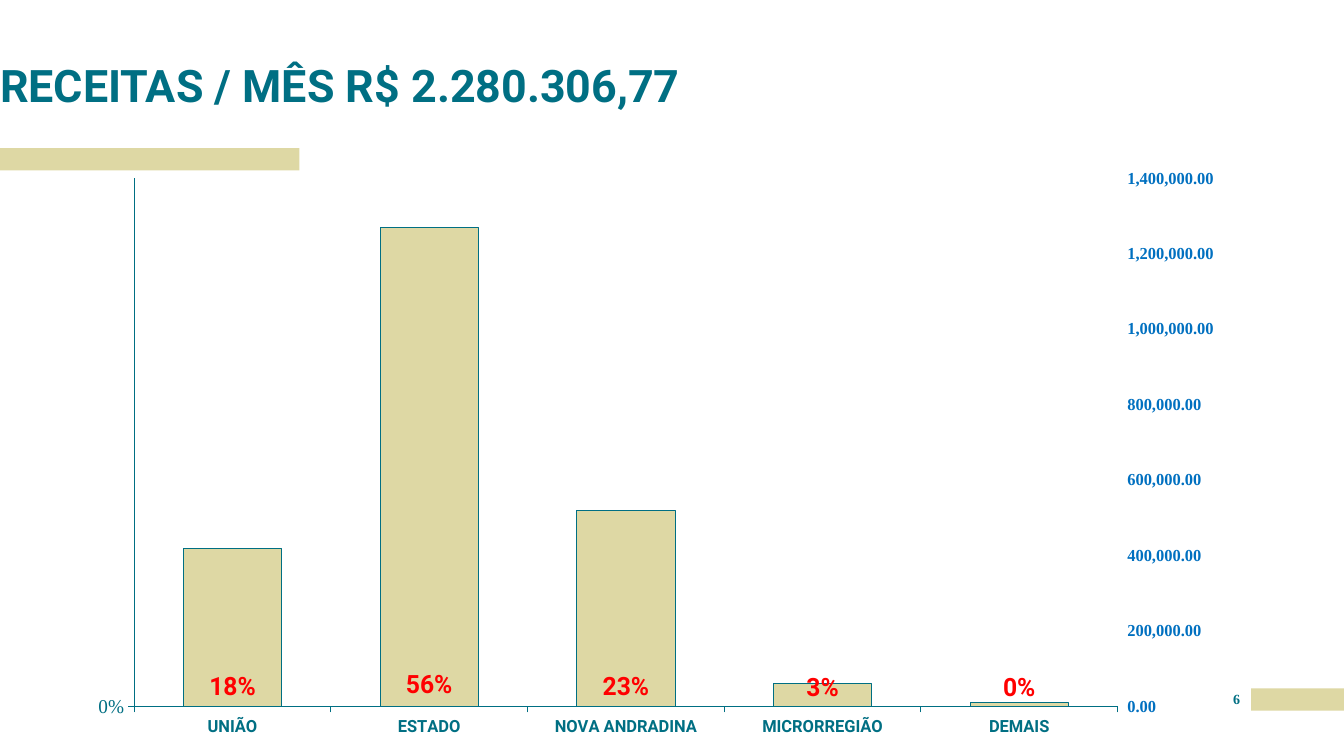
from copy import deepcopy

from lxml import etree
from pptx import Presentation
from pptx.chart.data import CategoryChartData
from pptx.dml.color import RGBColor
from pptx.enum import chart as ch, shapes, text
from pptx.oxml import parse_xml
from pptx.oxml.ns import nsdecls, qn
from pptx.util import Inches, Pt

TEAL = RGBColor(0x00, 0x6F, 0x83)
SAND = RGBColor(0xDE, 0xD8, 0xA4)
PALE_CYAN = RGBColor(0xA5, 0xE1, 0xE4)
BLUE = RGBColor(0x00, 0x70, 0xC0)
RED = RGBColor(0xFF, 0x00, 0x00)


def set_font(font, name, size, color, bold=False):
    font.name, font.size, font.bold = name, Pt(size), bold
    font.color.rgb = color


def clear_margins(frame):
    frame.margin_left = frame.margin_right = frame.margin_top = frame.margin_bottom = 0
    frame.word_wrap = True


presentation = Presentation()
presentation.slide_width = Inches(13.33)
presentation.slide_height = Inches(7.5)
slide = presentation.slides.add_slide(presentation.slide_layouts[5])

# Accent bars
for left, top, width in ((12.41, 6.83, 0.92), (0, 1.47, 2.97)):
    bar = slide.shapes.add_shape(shapes.MSO_SHAPE.RECTANGLE, Inches(left), Inches(top),
                                 Inches(width), Inches(0.22))
    bar.shadow.inherit = False
    bar.fill.solid()
    bar.fill.fore_color.rgb = SAND
    bar.line.fill.background()

# Title
title = slide.shapes.title
title.left, title.top, title.width, title.height = map(Inches, (0, 0.46, 8.53, 0.65))
clear_margins(title.text_frame)
title.text_frame.auto_size = text.MSO_AUTO_SIZE.NONE
title.text_frame.vertical_anchor = text.MSO_ANCHOR.BOTTOM
title.text_frame.text = "RECEITAS / MÊS R$ 2.280.306,77"
paragraph = title.text_frame.paragraphs[0]
paragraph.alignment = text.PP_ALIGN.LEFT
paragraph.line_spacing = 0.9
set_font(paragraph.font, "Roboto", 32, TEAL, True)

# Chart: shares on the left axis, amounts on the right axis
data = CategoryChartData()
data.categories = ["UNIÃO", "ESTADO", "NOVA ANDRADINA", "MICRORREGIÃO", "DEMAIS"]
data.add_series("Series 1", (0.18, 0.56, 0.23, 0.03, 0), "0%")
data.add_series("Series 2", (420000, 1270000, 520000, 60000, 10000), "#,##0.00")
chart = slide.shapes.add_chart(ch.XL_CHART_TYPE.COLUMN_CLUSTERED, Inches(0.32), Inches(1.59),
                               Inches(11.72), Inches(5.79), data).chart
chart.has_legend = False
chart.has_title = False
set_font(chart.font, "Times New Roman", 10, TEAL)

plot = chart.plots[0]
plot.gap_width = 100
plot.overlap = 100
plot.vary_by_categories = False

category_axis, share_axis = chart.category_axis, chart.value_axis
for axis in (category_axis, share_axis):
    axis.major_tick_mark = ch.XL_TICK_MARK.OUTSIDE
    axis.format.line.color.rgb = TEAL
    axis.format.line.width = Pt(0.75)
category_axis.tick_label_position = ch.XL_TICK_LABEL_POSITION.LOW
set_font(category_axis.tick_labels.font, "Roboto", 12, TEAL, True)
set_font(share_axis.tick_labels.font, "Times New Roman", 14, TEAL)
share_axis.tick_labels.number_format = "0%"
share_axis.tick_labels.number_format_is_linked = False
share_axis.minimum_scale, share_axis.maximum_scale = 0, 100
share_axis.major_unit = 10000
share_axis.major_gridlines.format.line.color.rgb = PALE_CYAN
share_axis.major_gridlines.format.line.width = Pt(0.75)

# Second column group with its own pair of axes
plot_area = chart._chartSpace.chart.plotArea
share_group = plot_area.find(qn("c:barChart"))
amount_group = deepcopy(share_group)
share_group.remove(share_group.findall(qn("c:ser"))[1])
amount_group.remove(amount_group.findall(qn("c:ser"))[0])
for axis_id, number in zip(amount_group.findall(qn("c:axId")), ("5001", "5002")):
    axis_id.set("val", number)
share_group.addnext(amount_group)

hidden_axis = parse_xml(f"""<c:catAx {nsdecls('c')}>
  <c:axId val="5001"/><c:scaling><c:orientation val="minMax"/></c:scaling>
  <c:delete val="1"/><c:axPos val="b"/><c:crossAx val="5002"/><c:crosses val="autoZero"/>
</c:catAx>""")
amount_axis = parse_xml(f"""<c:valAx {nsdecls('c', 'a')}>
  <c:axId val="5002"/>
  <c:scaling><c:orientation val="minMax"/><c:max val="1400000"/><c:min val="0"/></c:scaling>
  <c:delete val="0"/><c:axPos val="r"/><c:numFmt formatCode="#,##0.00" sourceLinked="0"/>
  <c:majorTickMark val="out"/><c:minorTickMark val="none"/><c:tickLblPos val="nextTo"/>
  <c:spPr><a:ln><a:noFill/></a:ln></c:spPr>
  <c:txPr><a:bodyPr/><a:p><a:pPr><a:defRPr sz="1200" b="1">
    <a:solidFill><a:srgbClr val="{BLUE}"/></a:solidFill><a:latin typeface="Times New Roman"/>
  </a:defRPr></a:pPr><a:endParaRPr lang="pt-BR"/></a:p></c:txPr>
  <c:crossAx val="5001"/><c:crosses val="max"/><c:crossBetween val="between"/>
  <c:majorUnit val="200000"/>
</c:valAx>""")
plot_area.find(qn("c:valAx")).addnext(hidden_axis)
hidden_axis.addnext(amount_axis)

# Fixed inner plot area
for layout in plot_area.findall(qn("c:layout")):
    plot_area.remove(layout)
layout = etree.Element(qn("c:layout"))
manual = etree.SubElement(layout, qn("c:manualLayout"))
for tag, value in (("layoutTarget", "inner"), ("xMode", "edge"), ("yMode", "edge"),
                   ("x", "0.088"), ("y", "0.031"), ("w", "0.849"), ("h", "0.905")):
    etree.SubElement(manual, qn(f"c:{tag}")).set("val", value)
plot_area.insert(0, layout)

shares, amounts = (group.series[0] for group in chart.plots)
for series, color in ((shares, TEAL), (amounts, SAND)):
    series.format.fill.solid()
    series.format.fill.fore_color.rgb = color
amounts.format.line.color.rgb = TEAL
amounts.format.line.width = Pt(0.75)

labels = shares.data_labels
labels.show_value = True
labels.position = ch.XL_LABEL_POSITION.OUTSIDE_END
labels.number_format = "0%"
labels.number_format_is_linked = False
set_font(labels.font, "Roboto", 18, RED, True)

# Page number
page_number = slide.shapes.add_textbox(Inches(12.12), Inches(6.85), Inches(0.29), Inches(0.25))
clear_margins(page_number.text_frame)
page_number.text_frame.text = "6"
paragraph = page_number.text_frame.paragraphs[0]
paragraph.alignment = text.PP_ALIGN.CENTER
set_font(paragraph.font, "Times New Roman", 10, TEAL, True)

presentation.save("out.pptx")
